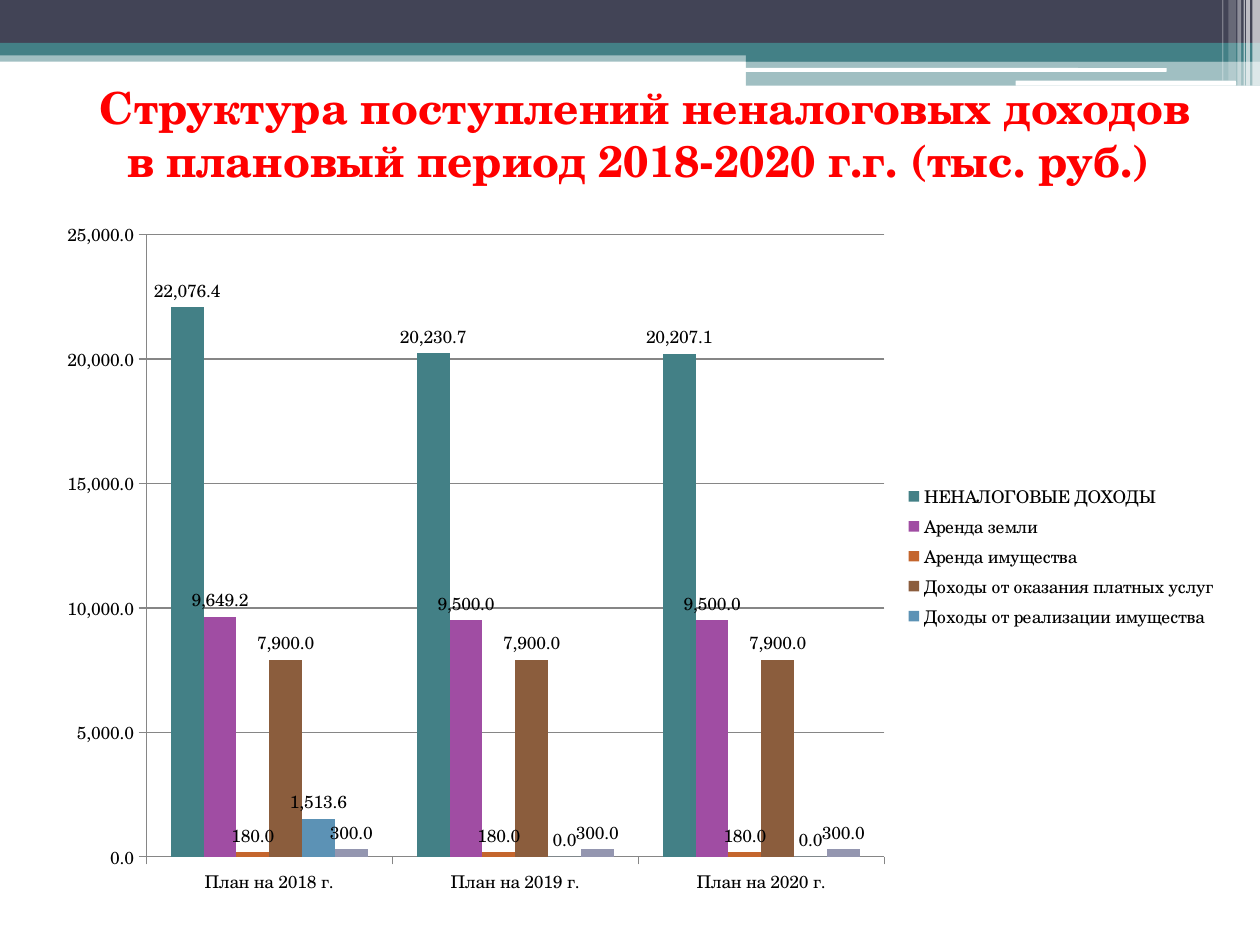
from lxml.etree import SubElement
from pptx import Presentation
from pptx.chart.data import CategoryChartData
from pptx.dml.color import RGBColor
from pptx.enum.chart import XL_CHART_TYPE, XL_LABEL_POSITION, XL_LEGEND_POSITION, XL_TICK_MARK
from pptx.enum.shapes import MSO_SHAPE
from pptx.enum.text import MSO_ANCHOR, MSO_AUTO_SIZE, PP_ALIGN
from pptx.oxml import parse_xml
from pptx.oxml.ns import nsdecls, qn
from pptx.util import Inches, Pt

FONT = "TeX Gyre Schola"
WHITE = RGBColor(0xFF, 0xFF, 0xFF)
BLACK = RGBColor(0x00, 0x00, 0x00)
RED = RGBColor(0xFF, 0x00, 0x00)
SLATE = RGBColor(0x42, 0x44, 0x56)
TEAL = RGBColor(0x43, 0x80, 0x86)
PURPLE = RGBColor(0xA0, 0x4D, 0xA3)
ORANGE = RGBColor(0xC4, 0x65, 0x2D)
BROWN = RGBColor(0x8B, 0x5D, 0x3D)
BLUE = RGBColor(0x5C, 0x92, 0xB5)
LAVENDER = RGBColor(0x94, 0x96, 0xB0)
GREY = RGBColor(0x86, 0x86, 0x86)

SLIDE_WIDTH, SLIDE_HEIGHT = Inches(10), Inches(7.5)
COLUMN = SLIDE_WIDTH // 1000
ROW = SLIDE_HEIGHT // 750

YEARS = ["План на 2018 г.", "План на 2019 г.", "План на 2020 г."]
INCOME = [
    ("НЕНАЛОГОВЫЕ ДОХОДЫ ", (22076.4, 20230.7, 20207.1), TEAL),
    ("Аренда земли", (9649.2, 9500, 9500), PURPLE),
    ("Аренда имущества", (180, 180, 180), ORANGE),
    ("Доходы от оказания платных услуг", (7900, 7900, 7900), BROWN),
    ("Доходы от реализации имущества", (1513.6, 0, 0), BLUE),
    ("Series 6", (300, 300, 300), LAVENDER),
]
UNLISTED_INCOME = 5
NUMBER_FORMAT = "#,##0.0"


def grid(left, top, width, height):
    return left * COLUMN, top * ROW, width * COLUMN, height * ROW


def add_band(slide, box, color, opacity=100, preset=MSO_SHAPE.RECTANGLE):
    band = slide.shapes.add_shape(preset, *grid(*box))
    band.shadow.inherit = False
    band.line.fill.background()
    band.fill.solid()
    band.fill.fore_color.rgb = color
    if opacity < 100:
        tint = band.fill._xPr.find(qn("a:solidFill"))[0]
        SubElement(tint, qn("a:alpha"), val=str(opacity * 1000))


def add_banner(slide, box):
    left, top, width, height = box
    right = left + width
    step = 408
    add_band(slide, (left, top + 40, width, 9), TEAL, 50)
    add_band(slide, (left, top, width, 34), SLATE)
    add_band(slide, (left, top + 34, width, 10), TEAL)
    add_band(slide, (right - step, top + 39, step, 10), TEAL)
    add_band(slide, (right - step, top + 48, step, height - 48), TEAL, 50)
    for offset, drop, length, thickness in [(409, 54, 335, 3), (194, 64, 175, 4)]:
        add_band(slide, (right - offset, top + drop, length, thickness),
                 WHITE, preset=MSO_SHAPE.ROUNDED_RECTANGLE)
    for offset, thickness, depth, opacity in [
        (6, 6, height, 65), (11, 3, height, 65), (13, 1, height, 60),
        (18, 3, height, 40), (25, 6, height - 4, 20), (30, 1, height - 4, 30),
    ]:
        add_band(slide, (right - offset, top, thickness, depth), WHITE, opacity)


def place_title(slide, box):
    title = slide.shapes.title
    title.left, title.top, title.width, title.height = grid(*box)
    frame = title.text_frame
    frame.text = ("Структура поступлений неналоговых доходов "
                  "в плановый период 2018-2020 г.г. (тыс. руб.) ")
    frame.word_wrap = True
    frame.auto_size = MSO_AUTO_SIZE.NONE
    frame.vertical_anchor = MSO_ANCHOR.MIDDLE
    heading = frame.paragraphs[0]
    heading.alignment = PP_ALIGN.CENTER
    font = heading.runs[0].font
    font.name, font.size, font.bold = FONT, Pt(25.2), True
    font.color.rgb = RED
    title._element.getparent().append(title._element)


def style_axes(chart):
    amounts = chart.value_axis
    amounts.minimum_scale, amounts.maximum_scale, amounts.major_unit = 0, 25000, 5000
    amounts.has_major_gridlines = True
    amounts.major_gridlines.format.line.color.rgb = GREY
    amounts.tick_labels.number_format = NUMBER_FORMAT
    amounts.tick_labels.number_format_is_linked = False
    for axis in (amounts, chart.category_axis):
        axis.major_tick_mark = XL_TICK_MARK.OUTSIDE
        axis.format.line.color.rgb = GREY


def style_legend(chart):
    chart.has_legend = True
    legend = chart.legend
    legend.position = XL_LEGEND_POSITION.RIGHT
    legend.include_in_layout = False
    legend._element.find(qn("c:legendPos")).addnext(parse_xml(
        f'<c:legendEntry {nsdecls("c")}><c:idx val="{UNLISTED_INCOME}"/>'
        '<c:delete val="1"/></c:legendEntry>'))


def set_plot_area(chart, x, y, w, h):
    plot_area = chart._chartSpace.chart.plotArea
    for layout in plot_area.findall(qn("c:layout")):
        plot_area.remove(layout)
    shares = "".join(f'<c:{side} val="{share}"/>'
                     for side, share in zip("xywh", (x, y, w, h)))
    plot_area.insert(0, parse_xml(
        f'<c:layout {nsdecls("c")}><c:manualLayout><c:layoutTarget val="inner"/>'
        '<c:xMode val="edge"/><c:yMode val="edge"/>'
        f'{shares}</c:manualLayout></c:layout>'))


def add_income_chart(slide, box):
    income_data = CategoryChartData(number_format=NUMBER_FORMAT)
    income_data.categories = YEARS
    for name, amounts, _ in INCOME:
        income_data.add_series(name, amounts)
    chart = slide.shapes.add_chart(
        XL_CHART_TYPE.COLUMN_CLUSTERED, *grid(*box), income_data).chart
    chart.has_title = False
    chart.font.name, chart.font.size = FONT, Pt(10)
    chart.font.color.rgb = BLACK
    columns = chart.plots[0]
    columns.vary_by_categories = False
    columns.gap_width, columns.overlap = 150, 0
    for series, (_, _, color) in zip(columns.series, INCOME):
        series.format.fill.solid()
        series.format.fill.fore_color.rgb = color
        labels = series.data_labels
        labels.show_value = True
        labels.number_format = NUMBER_FORMAT
        labels.number_format_is_linked = False
        labels.position = XL_LABEL_POSITION.OUTSIDE_END
    style_axes(chart)
    style_legend(chart)
    set_plot_area(chart, 0.09, 0.04, 0.62, 0.89)


def main():
    presentation = Presentation()
    presentation.slide_width, presentation.slide_height = SLIDE_WIDTH, SLIDE_HEIGHT
    slide = presentation.slides.add_slide(presentation.slide_layouts[5])
    add_banner(slide, (0, 0, 1000, 68))
    place_title(slide, (62, 62, 900, 87))
    add_income_chart(slide, (31, 164, 945, 555))
    presentation.save("out.pptx")


if __name__ == "__main__":
    main()
